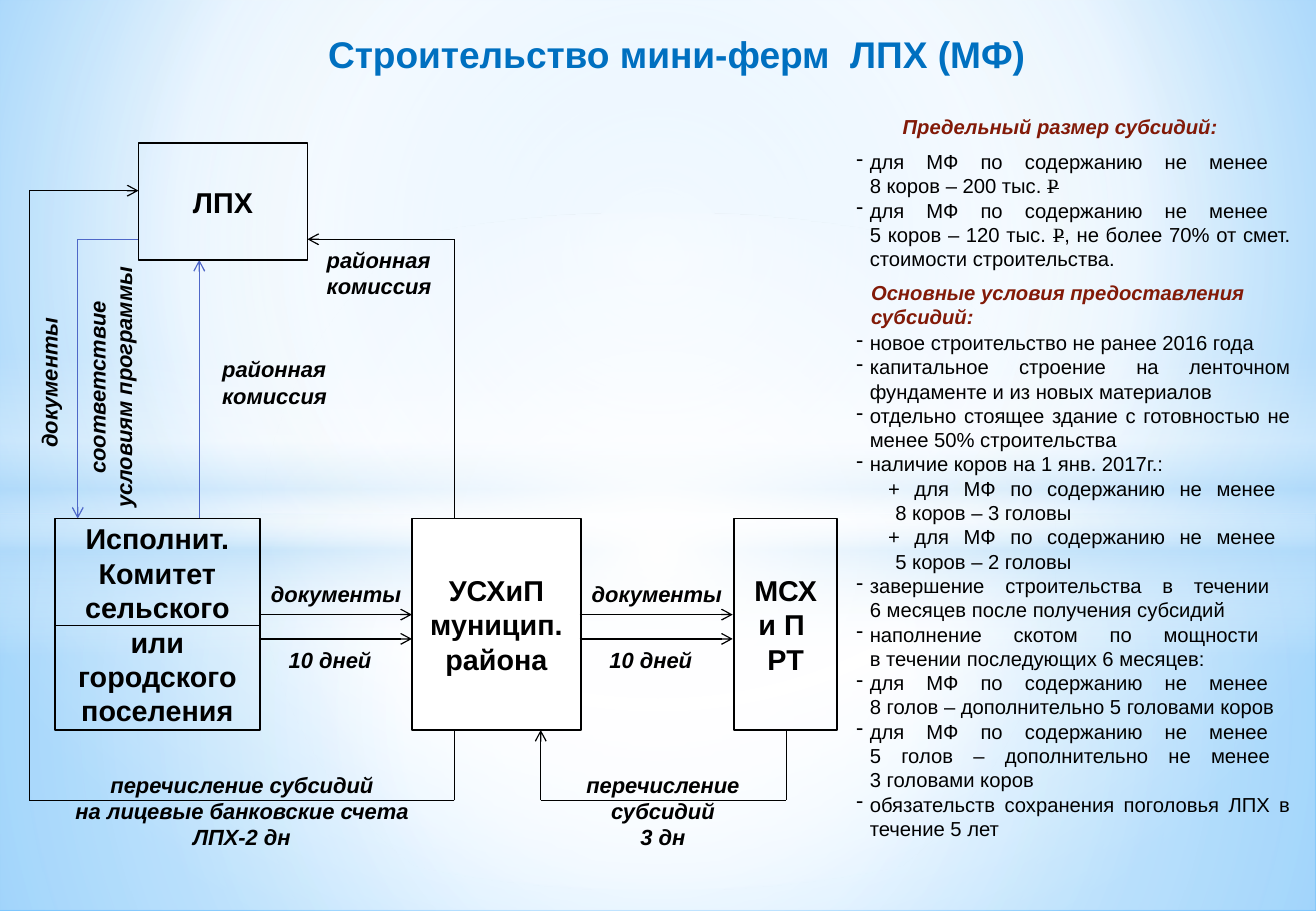
from lxml.etree import SubElement
from pptx import Presentation
from pptx.dml.color import RGBColor
from pptx.enum.shapes import MSO_CONNECTOR, MSO_SHAPE
from pptx.enum.text import MSO_ANCHOR, MSO_AUTO_SIZE, PP_ALIGN
from pptx.oxml.ns import qn
from pptx.util import Inches, Pt

WIDTH, HEIGHT = 10.83, 7.5
BLACK, WHITE, BLUE, TITLE_BLUE, DARK_RED = "000000", "FFFFFF", "4E67C8", "0070C0", "821A08"
SKY = "B4DCFA"

LIMITS = [
    "для МФ по содержанию не менее \n8 коров – 200 тыс. ~Р~",
    "для МФ по содержанию не менее \n5 коров – 120 тыс. ~Р~, не более 70% от смет. стоимости строительства.",
]
CONDITIONS = [
    "новое строительство не ранее 2016 года",
    "капитальное строение на ленточном фундаменте и из новых материалов",
    "отдельно стоящее здание с готовностью не менее 50% строительства",
    "наличие коров на 1 янв. 2017г.:",
    "+ для МФ по содержанию не менее \n8 коров – 3 головы",
    "+ для МФ по содержанию не менее \n5 коров – 2 головы",
    "завершение строительства в течении \n6 месяцев после получения субсидий",
    "наполнение скотом по мощности \nв течении последующих 6 месяцев:",
    "для МФ по содержанию не менее \n8 голов – дополнительно 5 головами коров",
    "для МФ по содержанию не менее \n5 голов – дополнительно не менее \n3 головами коров",
    "обязательств сохранения поголовья ЛПХ в течение 5 лет",
]


def color(hex_string):
    return RGBColor.from_string(hex_string)


def inches(*lengths):
    return [Inches(length) for length in lengths]


def set_gradient(owner, fill, stops, center=None):
    """Stops are (position, colour, opacity) in percent; without a center the gradient runs down."""
    fill.gradient()
    gradient = owner.element.find(".//" + qn("a:gradFill"))
    for child in list(gradient):
        gradient.remove(child)
    stop_list = SubElement(gradient, qn("a:gsLst"))
    for position, hex_string, opacity in stops:
        stop = SubElement(stop_list, qn("a:gs"), pos=str(position * 1000))
        tint = SubElement(stop, qn("a:srgbClr"), val=hex_string)
        if opacity < 100:
            SubElement(tint, qn("a:alpha"), val=str(opacity * 1000))
    if center:
        shade = SubElement(gradient, qn("a:path"), path="circle")
        sides = {side: str(share * 1000) for side, share in zip("ltrb", center)}
        SubElement(shade, qn("a:fillToRect"), **sides)
    else:
        SubElement(gradient, qn("a:lin"), ang="5400000", scaled="0")


def add_backdrop(slide):
    middle = (50, 50, 50, 50)
    set_gradient(slide, slide.background.fill,
                 [(0, "9ED5FF", 100), (60, WHITE, 100), (100, "5BB9FF", 100)], (20, 10, 20, 60))
    layers = [
        (MSO_SHAPE.RECTANGLE, 4.23, 3.27, [(0, WHITE, 91), (37, WHITE, 76), (100, SKY, 79)], middle),
        (MSO_SHAPE.RECTANGLE, 0, 4.23, [(0, WHITE, 89), (48, WHITE, 62), (100, SKY, 79)], middle),
        (MSO_SHAPE.RECTANGLE, 2.9, 2.5, [(0, WHITE, 0), (29, WHITE, 30), (45, SKY, 40),
                                         (55, WHITE, 26), (65, SKY, 60), (100, WHITE, 0)], None),
        (MSO_SHAPE.OVAL, 1.75, 5.58, [(0, WHITE, 100), (54, WHITE, 0)], middle),
    ]
    for kind, top, height, stops, center in layers:
        shape = slide.shapes.add_shape(kind, *inches(0, top, WIDTH, height))
        shape.shadow.inherit = False
        shape.line.fill.background()
        set_gradient(shape, shape.fill, stops, center)


def format_paragraph(paragraph, size, hex_string=BLACK, bold=True, italic=False, align=PP_ALIGN.LEFT):
    paragraph.alignment = align
    font = paragraph.font
    font.name, font.size, font.bold, font.italic = "Arial", Pt(size), bold, italic
    font.color.rgb = color(hex_string)


def add_title(slide, left, top, width, height):
    title = slide.shapes.title
    slide.shapes.element.append(title.element)  # in front of the backdrop
    title.left, title.top, title.width, title.height = inches(left, top, width, height)
    frame = title.text_frame
    frame.text = "Строительство мини-ферм  ЛПХ (МФ)"
    frame.word_wrap = False
    frame.auto_size = MSO_AUTO_SIZE.NONE
    frame.vertical_anchor = MSO_ANCHOR.TOP
    format_paragraph(frame.paragraphs[0], 22, TITLE_BLUE)


def add_label(slide, box, text, size=13, hex_string=BLACK, align=PP_ALIGN.CENTER, rotation=0):
    label = slide.shapes.add_textbox(*inches(*box))
    label.rotation = rotation
    label.text_frame.word_wrap = False
    label.text_frame.text = text
    for paragraph in label.text_frame.paragraphs:
        format_paragraph(paragraph, size, hex_string, italic=True, align=align)


def add_list(slide, box, items):
    """Items opening with + are indented without a dash; text between ~ is struck through."""
    frame = slide.shapes.add_textbox(*inches(*box)).text_frame
    frame.word_wrap = True
    for index, item in enumerate(items):
        paragraph = frame.paragraphs[0] if index == 0 else frame.add_paragraph()
        nested = item.startswith("+")
        margin, hanging = (0.32, 0.06) if nested else (0.11, 0.11)
        properties = paragraph._p.get_or_add_pPr()
        properties.set("marL", str(Inches(margin)))
        properties.set("indent", str(-Inches(hanging)))
        if not nested:
            SubElement(properties, qn("a:buChar"), char="-")
        format_paragraph(paragraph, 12, bold=False, align=PP_ALIGN.JUSTIFY)
        for part_index, part in enumerate(item.split("~")):
            for line_index, line in enumerate(part.split("\n")):
                if line_index:
                    paragraph.add_line_break()
                if not line:
                    continue
                run = paragraph.add_run()
                run.text = line
                if part_index % 2:
                    run.font.name = "Times New Roman"
                    run._r.get_or_add_rPr().set("strike", "sngStrike")


def add_terms(slide, left, top, width):
    add_label(slide, (left + 0.38, top, 2.82, 0.3), "Предельный размер субсидий:",
              12, DARK_RED, PP_ALIGN.LEFT)
    add_list(slide, (left, top + 0.29, width, 1.11), LIMITS)
    add_label(slide, (left + 0.12, top + 1.37, 3.36, 0.5),
              "Основные условия предоставления\nсубсидий:", 12, DARK_RED, PP_ALIGN.LEFT)
    add_list(slide, (left, top + 1.78, width, 4.34), CONDITIONS)


def add_route(slide, points, hex_string=BLACK, arrow=True):
    """Joins the points with straight lines; the arrowhead is on the last one."""
    for start, end in zip(points, points[1:]):
        line = slide.shapes.add_connector(MSO_CONNECTOR.STRAIGHT, *inches(*start, *end))
        line.line.color.rgb = color(hex_string)
        line.line.width = Pt(0.75)
        if arrow and end == points[-1]:
            SubElement(line.line._get_or_add_ln(), qn("a:tailEnd"), type="arrow")
        SubElement(line.element.spPr, qn("a:effectLst"))


def add_party(slide, box, text, filled=False):
    shape = slide.shapes.add_shape(MSO_SHAPE.RECTANGLE, *inches(*box))
    shape.shadow.inherit = False
    shape.line.color.rgb = color(BLACK)
    shape.line.width = Pt(1)
    frame = shape.text_frame
    if filled:
        shape.fill.solid()
        shape.fill.fore_color.rgb = color(WHITE)
        frame.margin_left = frame.margin_right = 0
    else:
        shape.fill.background()
    frame.word_wrap = True
    frame.vertical_anchor = MSO_ANCHOR.MIDDLE
    frame.text = text
    for paragraph in frame.paragraphs:
        format_paragraph(paragraph, 17, align=PP_ALIGN.CENTER)


def add_flow(slide, left, top):
    def place(x, y, *size):
        return (left + x, top + y, *size)

    routes = [
        ([(3.5, 5.41), (3.5, 0.79), (2.29, 0.79)], BLACK, True),
        ([(3.5, 5.41), (0, 5.41), (0, 0.39), (0.9, 0.39)], BLACK, True),
        ([(6.23, 4.83), (6.23, 5.41), (4.21, 5.41), (4.21, 4.83)], BLACK, True),
        ([(0.21, 3.97), (1.9, 3.97)], BLACK, False),
        ([(0.9, 0.79), (0.4, 0.79), (0.4, 3.09)], BLUE, True),
        ([(1.4, 3.09), (1.4, 0.96)], BLUE, True),
    ]
    for points, hex_string, arrow in routes:
        add_route(slide, [place(*point) for point in points], hex_string, arrow)

    add_party(slide, place(0.9, 0, 1.39, 0.96), "ЛПХ")
    add_party(slide, place(0.21, 3.09, 1.69, 1.74),
              "Исполнит. Комитет\nсельского\nили городского поселения")
    add_party(slide, place(3.15, 3.09, 1.39, 1.74), "УСХиП\nмуницип. района", filled=True)
    add_party(slide, place(5.8, 3.09, 0.85, 1.74), "МСХ и П \nРТ")

    for x in (1.89, 4.53):
        for y in (3.88, 4.08):
            add_route(slide, [place(x, y), place(x + 1.26, y)])
        add_label(slide, place(x - 0.01, 3.55, 1.29, 0.32), "документы")
        add_label(slide, place(x + 0.14, 4.09, 0.89, 0.32), "10 дней")
    for x, y in ((2.35, 0.8), (1.49, 1.7)):
        add_label(slide, place(x, y, 1.08, 0.54), "районная\nкомиссия", align=PP_ALIGN.LEFT)
    add_label(slide, place(-0.44, 1.74, 2.22, 0.54), "соответствие\nусловиям программы", rotation=270)
    add_label(slide, place(-0.48, 1.81, 1.29, 0.32), "документы", rotation=270)
    add_label(slide, place(0.26, 5.12, 2.98, 0.76),
              "перечисление субсидий\nна лицевые банковские счета\nЛПХ-2 дн")
    add_label(slide, place(4.45, 5.12, 1.53, 0.76), "перечисление\nсубсидий\n3 дн")


def main():
    presentation = Presentation()
    presentation.slide_width, presentation.slide_height = inches(WIDTH, HEIGHT)
    slide = presentation.slides.add_slide(presentation.slide_layouts[5])
    add_backdrop(slide)
    add_title(slide, 2.6, 0.21, 6.01, 0.47)
    add_terms(slide, 6.95, 0.89, 3.77)
    add_flow(slide, 0.24, 1.18)
    presentation.save("out.pptx")


if __name__ == "__main__":
    main()
